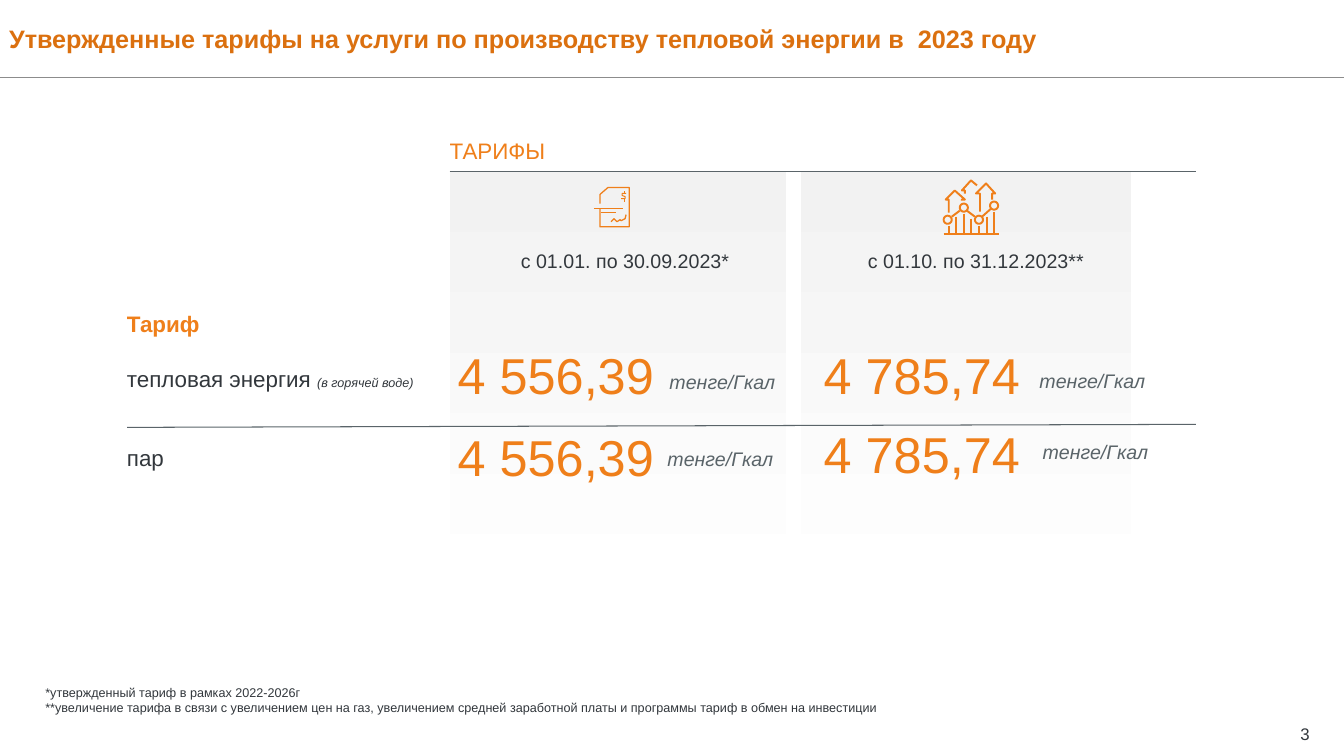
import math
from dataclasses import dataclass

from pptx import Presentation
from pptx import util as u
from pptx.dml import color
from pptx.enum import shapes, text
from pptx.oxml import xmlchemy


@dataclass(frozen=True)
class Theme:
    font: str = "Arial"
    title: str = "DB700F"
    orange: str = "EF7F1A"
    dark: str = "32373C"
    gray: str = "5A6469"
    rule: str = "8C8C8C"
    panel_top: str = "F2F2F2"
    panel_bottom: str = "FFFFFF"
    price_size: int = 36
    title_size: int = 18
    label_size: int = 16
    unit_size: int = 14
    page_size: int = 12
    note_size: int = 9


theme = Theme()
rgb = color.RGBColor.from_string
middle = text.MSO_ANCHOR.MIDDLE
top = text.MSO_ANCHOR.TOP

deck = Presentation()
deck.slide_width, deck.slide_height = u.Inches(13.33), u.Inches(7.5)
slide = deck.slides.add_slide(deck.slide_layouts[5])


def write(place, lines, size, ink, box=None, anchor=middle, align=text.PP_ALIGN.LEFT,
          left=0, right=0, after=0, wrap=True, bold=False, italic=False):
    area = [u.Inches(value) for value in place]
    if box is None:
        box = slide.shapes.add_textbox(*area)
    box.left, box.top, box.width, box.height = area
    frame = box.text_frame
    frame.text = lines
    frame.word_wrap = wrap
    frame.auto_size = text.MSO_AUTO_SIZE.NONE
    frame.vertical_anchor = anchor
    frame.margin_left, frame.margin_right = u.Inches(left), u.Inches(right)
    frame.margin_top = frame.margin_bottom = 0
    for para in frame.paragraphs:
        para.alignment = align
        para.space_after = u.Pt(after)
        for span in para.runs:
            span.font.name, span.font.size = theme.font, u.Pt(size)
            span.font.bold, span.font.italic = bold, italic
            span.font.color.rgb = rgb(ink)
    return frame


def rule(start, end, ink):
    line = slide.shapes.add_connector(shapes.MSO_CONNECTOR.STRAIGHT,
                                      *[u.Inches(value) for value in (*start, *end)])
    line._element.spPr.append(xmlchemy.OxmlElement("a:effectLst"))
    line.line.color.rgb = rgb(ink)
    line.line.width = u.Pt(0.75)


write((12.49, 7.15, 0.5, 0.25), "3", theme.page_size, theme.dark, align=text.PP_ALIGN.RIGHT)
rule((0, 0.77), (13.33, 0.77), theme.rule)
write((0.09, 0, 10.87, 0.77),
      "Утвержденные тарифы на услуги по производству тепловой энергии в  2023 году",
      theme.title_size, theme.title, box=slide.shapes.title, bold=True)

for left, width in ((4.46, 3.34), (7.94, 3.28)):
    panel = slide.shapes.add_shape(shapes.MSO_SHAPE.RECTANGLE, u.Inches(left), u.Inches(1.7),
                                   u.Inches(width), u.Inches(4.2))
    panel.shadow.inherit = False
    panel.line.fill.background()
    panel.fill.gradient()
    panel.fill.gradient_angle = 270
    for stop, position, shade in zip(panel.fill.gradient_stops, (0, 1),
                                     (theme.panel_top, theme.panel_bottom)):
        stop.position = position
        stop.color.rgb = rgb(shade)

write((4.46, 1.36, 7.4, 0.27), "ТАРИФЫ", theme.label_size, theme.orange,
      anchor=text.MSO_ANCHOR.BOTTOM)
rule((4.46, 1.7), (11.86, 1.7), theme.gray)

for left, width, period in ((5.08, 2.24, "с 01.01. по 30.09.2023*"),
                            (8.51, 2.34, "с 01.10. по 31.12.2023**")):
    write((left, 2.47, width, 0.24), period, theme.unit_size, theme.dark, anchor=top,
          align=text.PP_ALIGN.CENTER, left=0.08, right=0.08, after=2)

write((1.26, 3.08, 3.04, 0.27), "Тариф", theme.label_size, theme.orange,
      anchor=top, after=2, bold=True)
heat = write((1.26, 3.62, 3.04, 0.27), "тепловая энергия ", theme.label_size, theme.dark, after=2)
span = heat.paragraphs[0].add_run()
span.text = "(в горячей воде)"
span.font.name, span.font.size = theme.font, u.Pt(theme.note_size)
span.font.italic = True
span.font.color.rgb = rgb(theme.dark)
write((1.26, 4.4, 3.04, 0.27), "пар", theme.label_size, theme.dark, after=2)
rule((1.26, 4.24), (11.86, 4.21), theme.gray)

for price, price_left, price_top, unit_left, unit_top in (
        ("4 556,39", 4.46, 3.48, 6.64, 3.67),
        ("4 785,74", 8.09, 3.48, 10.31, 3.66),
        ("4 556,39", 4.46, 4.29, 6.62, 4.43),
        ("4 785,74", 8.09, 4.26, 10.34, 4.36)):
    amount = write((price_left, price_top, 2.04, 0.55), price, theme.price_size, theme.orange,
                   left=0.08, wrap=False)
    amount.paragraphs[0].line_spacing = 0.9
    write((unit_left, unit_top, 1.23, 0.24), "тенге/Гкал", theme.unit_size, theme.gray,
          right=0.08, after=2, italic=True)

receipt = [
    [(5.95, 2.02), (5.95, 1.93), (6.03, 1.86), (6.24, 1.86), (6.24, 2.25), (5.95, 2.25), (5.95, 2.07)],
    [(5.89, 2.07), (6.18, 2.07)],
    [(5.96, 2.11), (6.11, 2.11)],
]
signature = [[(6.06, 2.2), (6.09, 2.17), (6.12, 2.2), (6.15, 2.18), (6.16, 2.19), (6.2, 2.17),
              (6.21, 2.13)]]
dollar = [
    [(6.21, 1.92), (6.17, 1.92), (6.17, 1.94), (6.2, 1.95), (6.2, 1.97), (6.16, 1.97)],
    [(6.19, 1.9), (6.19, 1.92)],
    [(6.19, 1.97), (6.19, 2)],
]
left_arrow = [[(9.41, 2.11), (9.41, 1.98), (9.38, 1.98), (9.47, 1.89), (9.57, 1.98),
               (9.54, 1.98), (9.54, 1.99)]]
middle_arrow = [[(9.57, 1.92), (9.57, 1.89), (9.54, 1.89), (9.63, 1.79), (9.69, 1.84)]]
right_arrow = [[(9.72, 2.1), (9.72, 1.92), (9.68, 1.92), (9.78, 1.82), (9.87, 1.92),
                (9.84, 1.92), (9.84, 1.98)]]
trend = [
    [(9.44, 2.15), (9.52, 2.09)],
    [(9.59, 2.09), (9.67, 2.15)],
    [(9.74, 2.15), (9.83, 2.07)],
]
for x, y in ((9.4, 2.18), (9.56, 2.06), (9.71, 2.18), (9.86, 2.04)):
    trend.append([(x + 0.04 * math.cos(step * math.pi / 12), y + 0.04 * math.sin(step * math.pi / 12))
                  for step in range(25)])
bars = [[(9.41 + 0.45 / 6 * index, bar_top), (9.41 + 0.45 / 6 * index, 2.32)]
        for index, bar_top in enumerate((2.24, 2.15, 2.12, 2.17, 2.24, 2.15, 2.1))]
bars.append([(9.36, 2.32), (9.91, 2.32)])

for icon, weight in ((trend, 1.4), (bars, 1.4), (right_arrow, 1.4), (middle_arrow, 1.4),
                     (left_arrow, 1.4), (receipt, 0.9), (signature, 0.9), (dollar, 0.7)):
    builder = slide.shapes.build_freeform(*[u.Inches(value) for value in icon[0][0]])
    for points in icon:
        first, *others = [(u.Inches(x), u.Inches(y)) for x, y in points]
        if points is not icon[0]:
            builder.move_to(*first)
        builder.add_line_segments(others, close=False)
    outline = builder.convert_to_shape()
    outline.shadow.inherit = False
    outline.fill.background()
    outline.line.color.rgb = rgb(theme.orange)
    outline.line.width = u.Pt(weight)

write((0.45, 6.79, 12.34, 0.3),
      "*утвержденный тариф в рамках 2022-2026г\n"
      "**увеличение тарифа в связи с увеличением цен на газ, увеличением средней "
      "заработной платы и программы тариф в обмен на инвестиции",
      theme.note_size, theme.dark, anchor=top)

deck.save("out.pptx")
